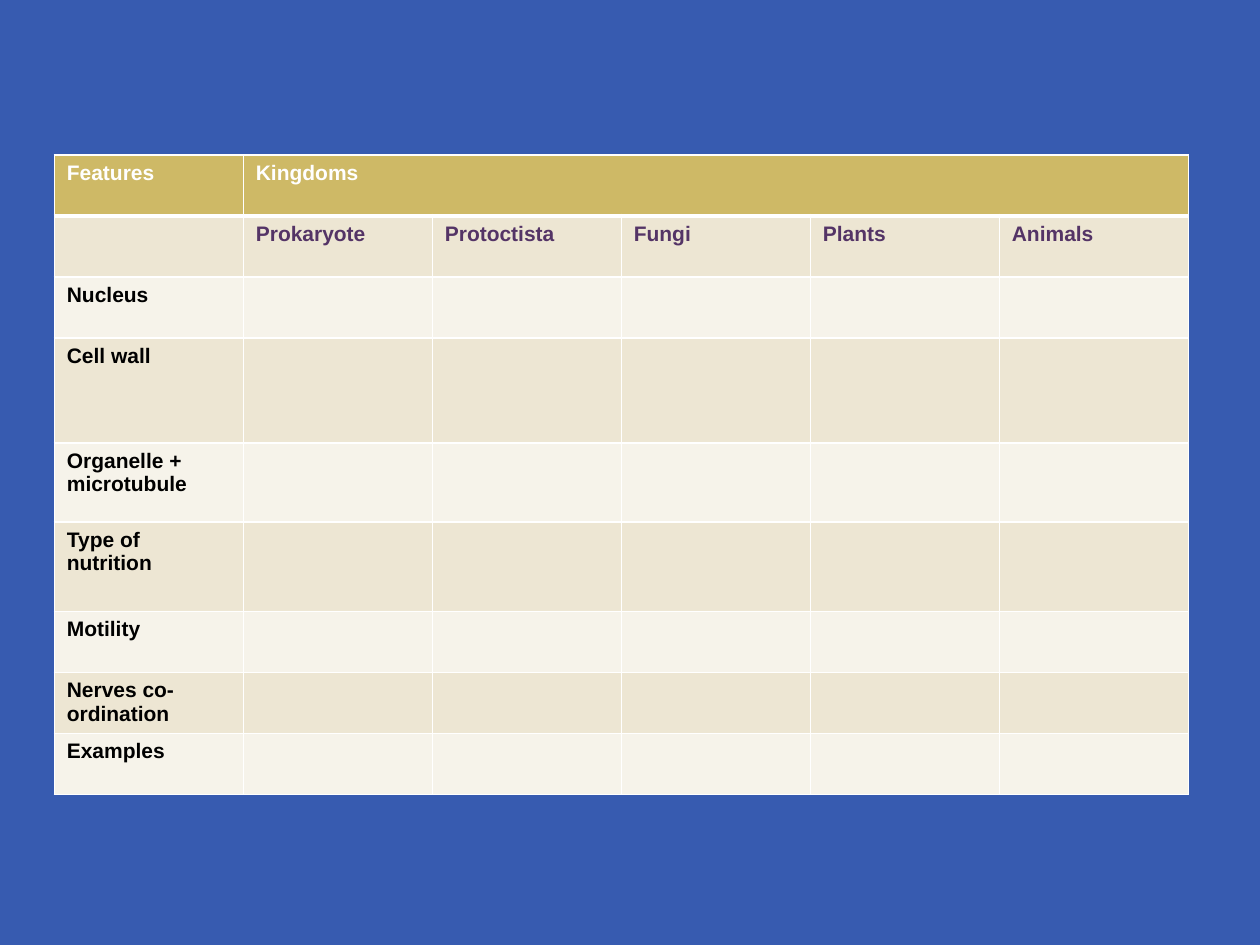
from lxml.etree import SubElement as Sub
from pptx import Presentation
from pptx.dml.color import RGBColor as RGB
from pptx.oxml.ns import qn
from pptx.util import Pt

BLUE = RGB(0x37, 0x5B, 0xB0)
GOLD = RGB(0xCE, 0xB9, 0x66)
SAND = RGB(0xED, 0xE6, 0xD3)
CREAM = RGB(0xF6, 0xF3, 0xEA)
PURPLE = RGB(0x54, 0x34, 0x66)
WHITE = RGB(0xFF, 0xFF, 0xFF)
BLACK = RGB(0, 0, 0)

BASE = 34.88  # height of a plain row
ROWS = [
    (BASE, ["Features", "Kingdoms"]),
    (BASE, ["", "Prokaryote", "Protoctista", "Fungi", "Plants", "Animals"]),
    (BASE, ["Nucleus"]),
    (60, ["Cell wall"]),
    (45.2, ["Organelle +\nmicrotubule"]),
    (51.2, ["Type of nutrition"]),
    (BASE, ["Motility"]),
    (BASE, ["Nerves co-ordination"]),
    (BASE, ["Examples"]),
]
COLS = 6


def set_edges(cell, row):
    """Draw white cell edges, heavier under the header row."""
    props = cell._tc.get_or_add_tcPr()
    heavy = {0: "lnB", 1: "lnT"}.get(row)
    for tag in ("lnL", "lnR", "lnT", "lnB"):
        width = Pt(3 if tag == heavy else 1)
        line = Sub(props, qn("a:" + tag), w=str(width))
        fill = Sub(line, qn("a:solidFill"))
        Sub(fill, qn("a:srgbClr"), val=str(WHITE))


def set_cell(cell, row, text):
    set_edges(cell, row)
    cell.fill.solid()
    cell.fill.fore_color.rgb = GOLD if row == 0 else SAND if row % 2 else CREAM
    if not text:
        return
    cell.text_frame.text = text
    for para in cell.text_frame.paragraphs:
        for run in para.runs:
            font = run.font
            font.name, font.size, font.bold = "Arial", Pt(12), True
            font.color.rgb = {0: WHITE, 1: PURPLE}.get(row, BLACK)


def add_grid(slide, left, top, width):
    """Place the table of features by kingdom."""
    height = sum(size for size, _ in ROWS)
    table = slide.shapes.add_table(
        len(ROWS), COLS, Pt(left), Pt(top), Pt(width), Pt(height)).table
    for col in table.columns:
        col.width = Pt(width / COLS)
    for row, (size, texts) in enumerate(ROWS):
        table.rows[row].height = Pt(size)
        for col in range(COLS):
            text = texts[col] if col < len(texts) else ""
            set_cell(table.cell(row, col), row, text)
    # "Kingdoms" spans all the kingdom columns
    table.cell(0, 1).merge(table.cell(0, COLS - 1))


def main():
    deck = Presentation()
    deck.slide_width, deck.slide_height = Pt(720), Pt(540)
    slide = deck.slides.add_slide(deck.slide_layouts[6])

    # Background
    back = slide.background.fill
    back.solid()
    back.fore_color.rgb = BLUE

    add_grid(slide, 31, 88.5, 648)
    deck.save("out.pptx")


if __name__ == "__main__":
    main()
